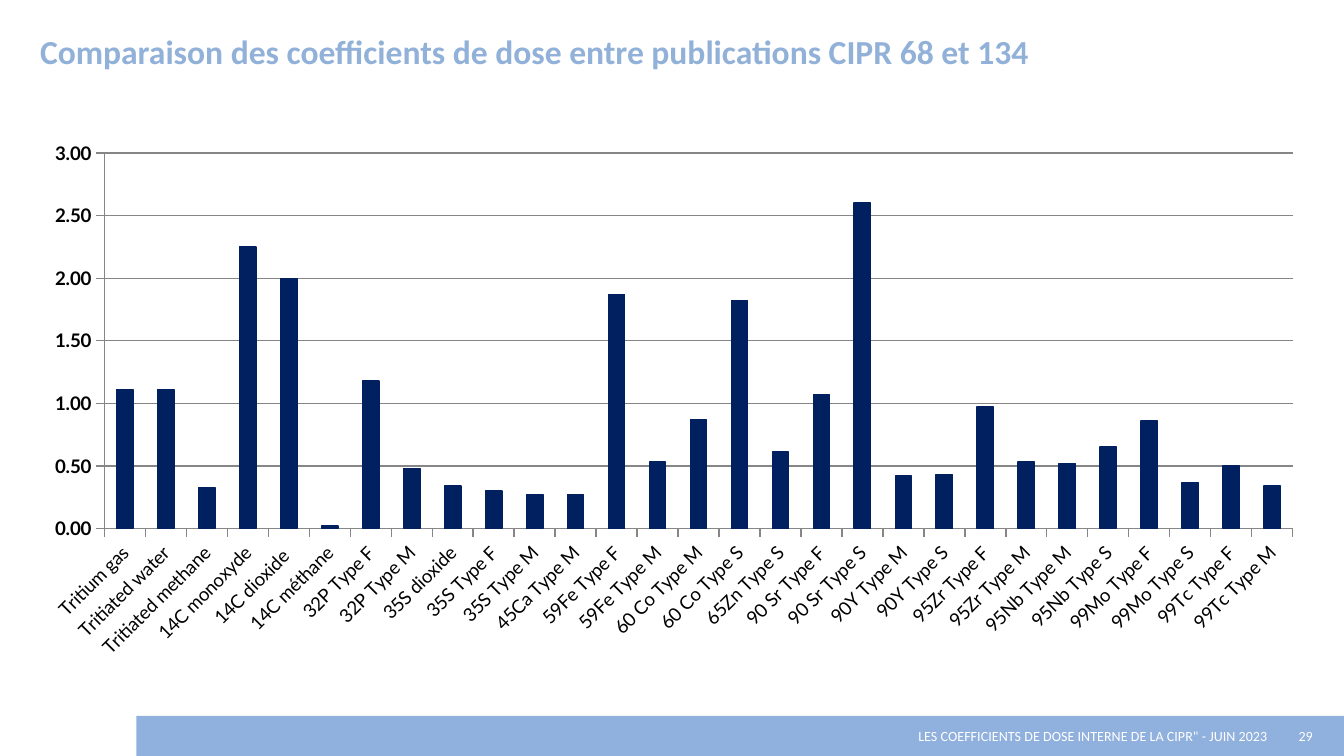
from dataclasses import dataclass

from lxml import etree
from pptx import Presentation
from pptx import util as u
from pptx.chart import data as chart_data
from pptx.dml import color
from pptx.enum import chart as charts, shapes, text

Pt = u.Pt


@dataclass(frozen=True)
class Theme:
    """Colours, fonts and type sizes of the deck."""
    band: str = "90B0DD"
    title: str = "91B1D9"
    bar: str = "002060"
    grid: str = "868686"
    ink: str = "000000"
    paper: str = "FFFFFF"
    text_font: str = "Calibri"
    chart_font: str = "Lato"
    title_size: float = 18
    footer_size: float = 7.5
    chart_size: float = 10


THEME = Theme()

RATIOS = [
    ("Tritium gas", 1.11), ("Tritiated water", 1.11), ("Tritiated methane", 0.33),
    ("14C monoxyde", 2.25), ("14C dioxide ", 2), ("14C méthane", 0.02),
    ("32P Type F", 1.18), ("32P Type M", 0.48), ("35S dioxide", 0.34),
    ("35S Type F", 0.3), ("35S Type M", 0.27), ("45Ca Type M", 0.27),
    ("59Fe Type F", 1.87), ("59Fe Type M", 0.53), ("60 Co Type M", 0.87),
    ("60 Co Type S", 1.82), ("65Zn Type S", 0.61), ("90 Sr Type F", 1.07),
    ("90 Sr Type S", 2.6), ("90Y Type M", 0.42), ("90Y Type S", 0.43),
    ("95Zr Type F", 0.97), ("95Zr Type M", 0.53), ("95Nb Type M", 0.52),
    ("95Nb Type S", 0.65), ("99Mo Type F", 0.86), ("99Mo Type S", 0.37),
    ("99Tc Type F", 0.5), ("99Tc Type M", 0.34),
]


def rgb(value):
    """Turn a hex string into a colour."""
    return color.RGBColor.from_string(value)


def style_font(font, name, size, ink, bold=False):
    """Apply a face, size, colour and weight to a font."""
    font.name, font.size, font.bold = name, Pt(size), bold
    font.color.rgb = rgb(ink)


def style_line(line, ink):
    """Give a line its colour and the common width."""
    line.color.rgb = rgb(ink)
    line.width = Pt(0.75)


def add_label(page, box, words, size, ink, align, bold=False, side_inset=7.2):
    """Add one line of text in the given box."""
    label = page.shapes.add_textbox(*map(Pt, box))
    frame = label.text_frame
    frame.word_wrap = True
    frame.vertical_anchor = text.MSO_ANCHOR.MIDDLE
    frame.margin_left = frame.margin_right = Pt(side_inset)
    frame.text = words
    para = frame.paragraphs[0]
    para.alignment = align
    style_font(para.runs[0].font, THEME.text_font, size, ink, bold)


def add_footer(page, box, words, number):
    """Draw the footer band with its caption and page number."""
    left, top, width, height = box
    number_width = 41
    caption_width = 479.5
    number_left = left + width - number_width
    band = page.shapes.add_shape(shapes.MSO_SHAPE.RECTANGLE, *map(Pt, box))
    band.shadow.inherit = False
    band.fill.solid()
    band.fill.fore_color.rgb = rgb(THEME.band)
    band.line.fill.background()
    add_label(page, (number_left - caption_width, top, caption_width, height), words,
              THEME.footer_size, THEME.paper, text.PP_ALIGN.RIGHT, side_inset=0)
    add_label(page, (number_left, top, number_width, height), number,
              THEME.footer_size, THEME.paper, text.PP_ALIGN.CENTER)


def place_plot(chart, **fractions):
    """Fix the inner plot area at fractions of the chart box."""
    plot_area = chart._chartSpace.chart.plotArea
    space = plot_area.nsmap["c"]
    for old in plot_area.findall(f"{{{space}}}layout"):
        plot_area.remove(old)
    layout = etree.Element(f"{{{space}}}layout")
    manual = etree.SubElement(layout, f"{{{space}}}manualLayout")
    settings = {"layoutTarget": "inner", "xMode": "edge", "yMode": "edge", **fractions}
    for key, value in settings.items():
        etree.SubElement(manual, f"{{{space}}}{key}").set("val", str(value))
    plot_area.insert(0, layout)


def add_ratio_chart(page, box):
    """Draw the column chart of dose coefficient ratios."""
    data = chart_data.CategoryChartData()
    data.categories = [name for name, _ in RATIOS]
    data.add_series("Series 1", [ratio for _, ratio in RATIOS])
    chart = page.shapes.add_chart(
        charts.XL_CHART_TYPE.COLUMN_CLUSTERED, *map(Pt, box), data).chart
    chart.has_legend = chart.has_title = False
    style_font(chart.font, THEME.chart_font, THEME.chart_size, THEME.ink)

    plot = chart.plots[0]
    plot.gap_width = 150
    plot.vary_by_categories = False
    series = plot.series[0]
    series.format.fill.solid()
    series.format.fill.fore_color.rgb = rgb(THEME.bar)
    style_line(series.format.line, THEME.bar)

    names, values = chart.category_axis, chart.value_axis
    for axis in (names, values):
        axis.major_tick_mark = charts.XL_TICK_MARK.OUTSIDE
        axis.minor_tick_mark = charts.XL_TICK_MARK.NONE
        style_line(axis.format.line, THEME.grid)
        style_font(axis.tick_labels.font, THEME.chart_font, THEME.chart_size,
                   THEME.ink, bold=axis is values)
    names.tick_labels.font._element.getparent().getparent().getparent().bodyPr.set(
        "rot", "-2700000")
    values.minimum_scale, values.maximum_scale, values.major_unit = 0, 3, 0.5
    values.tick_labels.number_format = "0.00"
    values.tick_labels.number_format_is_linked = False
    values.has_major_gridlines = True
    style_line(values.major_gridlines.format.line, THEME.grid)
    place_plot(chart, x=0.06, y=0.04, w=0.92, h=0.7)


def main():
    """Build and save the slide."""
    deck = Presentation()
    deck.slide_width, deck.slide_height = Pt(720), Pt(405)
    page = deck.slides.add_slide(deck.slide_layouts[6])
    add_footer(page, (73, 383.5, 647, 21.5),
               'LES COEFFICIENTS DE DOSE INTERNE DE LA CIPR" - JUIN 2023', "29")
    add_ratio_chart(page, (14.4, 70.5, 692, 287.5))
    add_label(page, (14.4, 13.5, 592.5, 27.5),
              "Comparaison des coefficients de dose entre publications CIPR 68 et 134",
              THEME.title_size, THEME.title, text.PP_ALIGN.LEFT, bold=True)
    deck.save("out.pptx")


if __name__ == "__main__":
    main()
